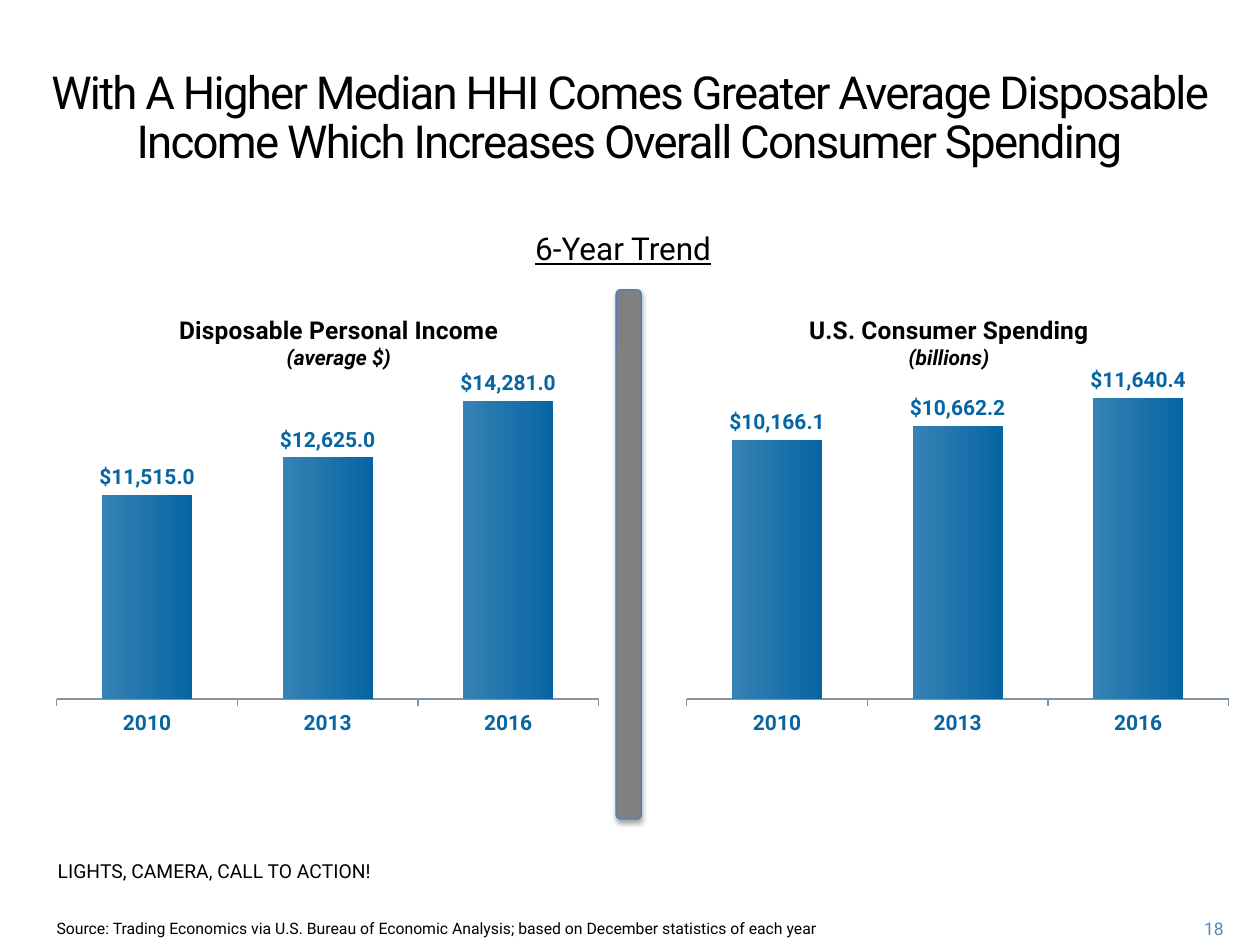
from lxml import etree
from pptx import Presentation
from pptx.chart.data import CategoryChartData
from pptx.dml.color import RGBColor
from pptx.enum.chart import XL_CHART_TYPE as ChartType, XL_LABEL_POSITION as LabelPos
from pptx.enum.chart import XL_TICK_MARK as Tick
from pptx.enum.shapes import MSO_SHAPE as Preset
from pptx.enum.text import MSO_ANCHOR as Anchor, MSO_AUTO_SIZE as AutoSize, PP_ALIGN as Align
from pptx.oxml import parse_xml
from pptx.oxml.ns import nsdecls, qn
from pptx.util import Pt

FONT = "Roboto"
COLORS = {
    "text": "000000", "number": "508ABA", "label": "0765A3",
    "bar_start": "3682B4", "bar_end": "0765A3", "axis": "8395A2",
    "divider": "808080", "divider_edge": "4B7EBC",
}
YEARS = ["2010", "2013", "2016"]
DOLLARS = '"$"#,##0.0'
CHART_SIZE = (322.5, 275)
TRENDS = [
    {"heading": "Disposable Personal Income", "unit": "(average $)",
     "values": [11515, 12625, 14281], "low": 5500, "high": 15000, "left": 26, "title_x": 0.23},
    {"heading": "U.S. Consumer Spending", "unit": "(billions)",
     "values": [10166.1, 10662.2, 11640.4], "low": 1020, "high": 12400, "left": 386,
     "title_x": 0.23},
]
CAPTIONS = [
    ("18", (662.4, 521.3, 43.9, 18), 10, {"color": "number", "align": Align.RIGHT}),
    ("Source: Trading Economics via U.S. Bureau of Economic Analysis; "
     "based on December statistics of each year", (25.2, 521.3, 471.6, 18.7), 9, {}),
    ("LIGHTS, CAMERA, CALL TO ACTION!", (25.9, 487.4, 221.8, 33.8), 11,
     {"anchor": Anchor.TOP}),
    ("6-Year Trend", (9.4, 127.4, 693.4, 28.8), 18,
     {"align": Align.CENTER, "underline": True}),
]


def rgb(name):
    return RGBColor.from_string(COLORS[name])


def style_font(font, size, color="text", **extras):
    for attribute, value in {"name": FONT, "size": Pt(size), **extras}.items():
        setattr(font, attribute, value)
    font.color.rgb = rgb(color)


def add_headline(slide, box):
    headline = slide.shapes.title
    for side, length in zip(("left", "top", "width", "height"), box):
        setattr(headline, side, Pt(length))
    frame = headline.text_frame
    frame.text = ("With A Higher Median HHI Comes Greater Average Disposable "
                  "Income Which Increases Overall Consumer Spending")
    for attribute, value in {"word_wrap": True, "auto_size": AutoSize.NONE,
                             "vertical_anchor": Anchor.TOP}.items():
        setattr(frame, attribute, value)
    line = frame.paragraphs[0]
    line.alignment, line.line_spacing = Align.CENTER, Pt(28)
    style_font(line.runs[0].font, 26)
    line.runs[0].font._element.set("spc", "-100")


def add_caption(slide, words, box, size, color="text", align=Align.LEFT,
                anchor=Anchor.MIDDLE, **extras):
    frame = slide.shapes.add_textbox(*map(Pt, box)).text_frame
    frame.word_wrap = True
    frame.vertical_anchor = anchor
    line = frame.paragraphs[0]
    line.alignment = align
    line.add_run().text = words
    style_font(line.runs[0].font, size, color, **extras)


def set_layout(parent, index, **fractions):
    """Place a chart part by fractions of the chart's size."""
    for old in parent.findall(qn("c:layout")):
        parent.remove(old)
    layout = parse_xml(f"<c:layout {nsdecls('c')}><c:manualLayout/></c:layout>")
    settings = {"xMode": "edge", "yMode": "edge", **fractions}
    if "w" in fractions:
        settings = {"layoutTarget": "inner", **settings}
    for tag, value in settings.items():
        etree.SubElement(layout[0], qn(f"c:{tag}")).set("val", str(value))
    parent.insert(index, layout)


def add_trend_chart(slide, trend, box):
    data = CategoryChartData(number_format=DOLLARS)
    data.categories = YEARS
    data.add_series("Series 1", trend["values"])
    chart = slide.shapes.add_chart(ChartType.COLUMN_CLUSTERED, *map(Pt, box), data).chart
    chart.has_legend = False
    style_font(chart.font, 18)

    heading = chart.chart_title.text_frame
    heading.text = trend["heading"]
    style_font(heading.paragraphs[0].runs[0].font, 14, bold=True)
    unit = heading.add_paragraph().add_run()
    unit.text = trend["unit"]
    style_font(unit.font, 12, bold=True, italic=True)
    set_layout(chart.chart_title._element, 1, x=trend["title_x"], y=0.09)
    plot_area = chart._chartSpace.chart.plotArea
    set_layout(plot_area, 0, x=0.02, y=0.23, w=0.96, h=0.67)

    dollars = chart.value_axis
    for attribute, value in {"minimum_scale": trend["low"], "maximum_scale": trend["high"],
                             "has_major_gridlines": False, "visible": False}.items():
        setattr(dollars, attribute, value)
    years = chart.category_axis
    years.major_tick_mark = Tick.OUTSIDE
    years.format.line.color.rgb = rgb("axis")
    years.format.line.width = Pt(0.75)
    style_font(years.tick_labels.font, 12, "label", bold=True)

    plot = chart.plots[0]
    for attribute, value in {"gap_width": 100, "overlap": -20, "vary_by_categories": False,
                             "has_data_labels": True}.items():
        setattr(plot, attribute, value)
    labels = plot.data_labels
    for attribute, value in {"show_value": True, "position": LabelPos.OUTSIDE_END,
                             "number_format": DOLLARS,
                             "number_format_is_linked": False}.items():
        setattr(labels, attribute, value)
    style_font(labels.font, 12, "label", bold=True)
    fill = plot.series[0].format.fill
    fill.gradient()
    fill.gradient_angle = 0
    for stop, color in zip(fill.gradient_stops, ("bar_start", "bar_end")):
        stop.color.rgb = rgb(color)


def add_divider(slide, box):
    divider = slide.shapes.add_shape(Preset.ROUNDED_RECTANGLE, *map(Pt, box))
    divider.fill.solid()
    divider.fill.fore_color.rgb = rgb("divider")
    divider.line.color.rgb = rgb("divider_edge")
    divider.line.width = Pt(0.75)
    divider.shadow.inherit = False
    effects = divider._element.spPr.find(qn("a:effectLst"))
    effects.append(parse_xml(
        f'<a:outerShdw {nsdecls("a")} blurRad="{Pt(3.1)}" dist="{Pt(1.8)}" dir="5400000" '
        f'rotWithShape="0"><a:srgbClr val="{COLORS["text"]}"><a:alpha val="35000"/>'
        '</a:srgbClr></a:outerShdw>'))


def build_trend_slide(deck):
    slide = deck.slides.add_slide(deck.slide_layouts[5])
    add_headline(slide, (13, 36, 693.4, 100.8))
    for words, box, size, style in CAPTIONS:
        add_caption(slide, words, box, size, **style)
    for trend in TRENDS:
        add_trend_chart(slide, trend, (trend["left"], 152, *CHART_SIZE))
    add_divider(slide, (352.1, 165.6, 14.4, 302.4))


def main():
    deck = Presentation()
    deck.slide_width, deck.slide_height = Pt(720), Pt(540)
    build_trend_slide(deck)
    deck.save("out.pptx")


if __name__ == "__main__":
    main()
